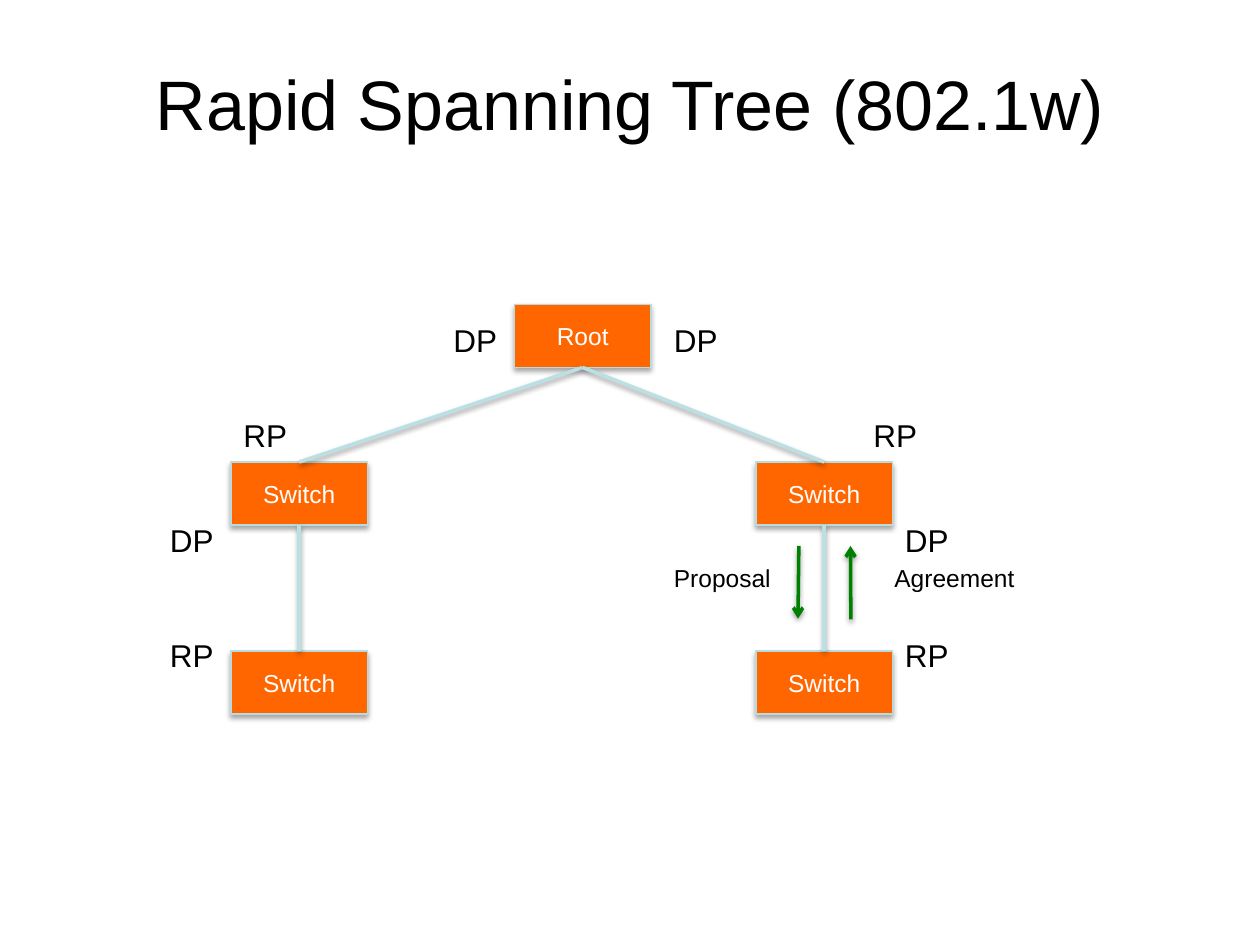
from lxml.etree import SubElement
from pptx import Presentation
from pptx.dml.color import RGBColor
from pptx.enum.shapes import MSO_CONNECTOR, MSO_SHAPE
from pptx.enum.text import MSO_ANCHOR, MSO_AUTO_SIZE, PP_ALIGN
from pptx.oxml.ns import qn
from pptx.util import Pt

BLACK = RGBColor(0x00, 0x00, 0x00)
WHITE = RGBColor(0xFF, 0xFF, 0xFF)
ORANGE = RGBColor(0xFF, 0x66, 0x00)
BORDER = RGBColor(0xB6, 0xDC, 0xDF)
LINK = RGBColor(0xBB, 0xE0, 0xE3)
GREEN = RGBColor(0x00, 0x80, 0x00)


def write(shape, text, size, color, align):
    frame = shape.text_frame
    frame.text = text
    paragraph = frame.paragraphs[0]
    paragraph.alignment = align
    paragraph.font.name = "Arial"
    paragraph.font.size = Pt(size)
    paragraph.font.color.rgb = color
    return frame


def finish(shape, color, width, opacity, distance):
    shape.line.color.rgb = color
    shape.line.width = Pt(width)
    effects = SubElement(shape._element.spPr, qn("a:effectLst"))
    shadow = SubElement(effects, qn("a:outerShdw"), blurRad=str(Pt(3.1)),
                        dist=str(Pt(distance)), dir="5400000", rotWithShape="0")
    tint = SubElement(shadow, qn("a:srgbClr"), val="000000")
    SubElement(tint, qn("a:alpha"), val=str(opacity * 1000))


deck = Presentation()
deck.slide_width, deck.slide_height = Pt(720), Pt(540)
page = deck.slides.add_slide(deck.slide_layouts[5])

title = page.shapes.title
title.left, title.top, title.width, title.height = Pt(36), Pt(21.6), Pt(648), Pt(74.4)
frame = write(title, "Rapid Spanning Tree (802.1w)", 40, BLACK, PP_ALIGN.CENTER)
frame.vertical_anchor = MSO_ANCHOR.MIDDLE

nodes = {}
for key, text, left, top in [
    ("root", "Root", 294, 174),
    ("left upper", "Switch", 132, 264),
    ("left lower", "Switch", 132, 372),
    ("right upper", "Switch", 432, 264),
    ("right lower", "Switch", 432, 372),
]:
    box = page.shapes.add_shape(MSO_SHAPE.RECTANGLE, Pt(left), Pt(top), Pt(78), Pt(36))
    box.fill.solid()
    box.fill.fore_color.rgb = ORANGE
    finish(box, BORDER, 0.75, 35, 1.8)
    frame = write(box, text, 14, WHITE, PP_ALIGN.CENTER)
    frame.vertical_anchor = MSO_ANCHOR.MIDDLE
    nodes[key] = box

for upper, lower in [
    ("root", "left upper"),
    ("root", "right upper"),
    ("left upper", "left lower"),
    ("right upper", "right lower"),
]:
    start, end = nodes[lower], nodes[upper]
    link = page.shapes.add_connector(
        MSO_CONNECTOR.STRAIGHT,
        start.left + start.width // 2, start.top,
        end.left + end.width // 2, end.top + end.height)
    link.begin_connect(start, 0)
    link.end_connect(end, 2)
    finish(link, LINK, 2, 38, 1.6)

for start_x, start_y, end_x, end_y in [(456.5, 312, 456, 353.5), (486.2, 354, 486, 312)]:
    arrow = page.shapes.add_connector(
        MSO_CONNECTOR.STRAIGHT, Pt(start_x), Pt(start_y), Pt(end_x), Pt(end_y))
    finish(arrow, GREEN, 2, 38, 1.6)
    SubElement(arrow.line._get_or_add_ln(), qn("a:tailEnd"), type="arrow")

for text, left, top, width, height, size in [
    ("Proposal", 378, 318, 70.5, 24.5, 14),
    ("Agreement", 504, 318, 84, 24.5, 14),
] + [(role, left, top, 39.5, 29, 18) for role, left, top in [
    ("DP", 252, 180),
    ("DP", 378, 180),
    ("RP", 132, 234),
    ("RP", 492, 234),
    ("DP", 90, 294),
    ("RP", 90, 360),
    ("DP", 510, 294),
    ("RP", 510, 360),
]]:
    label = page.shapes.add_textbox(Pt(left), Pt(top), Pt(width), Pt(height))
    frame = write(label, text, size, BLACK, PP_ALIGN.LEFT)
    frame.word_wrap = False
    frame.auto_size = MSO_AUTO_SIZE.SHAPE_TO_FIT_TEXT

deck.save("out.pptx")
